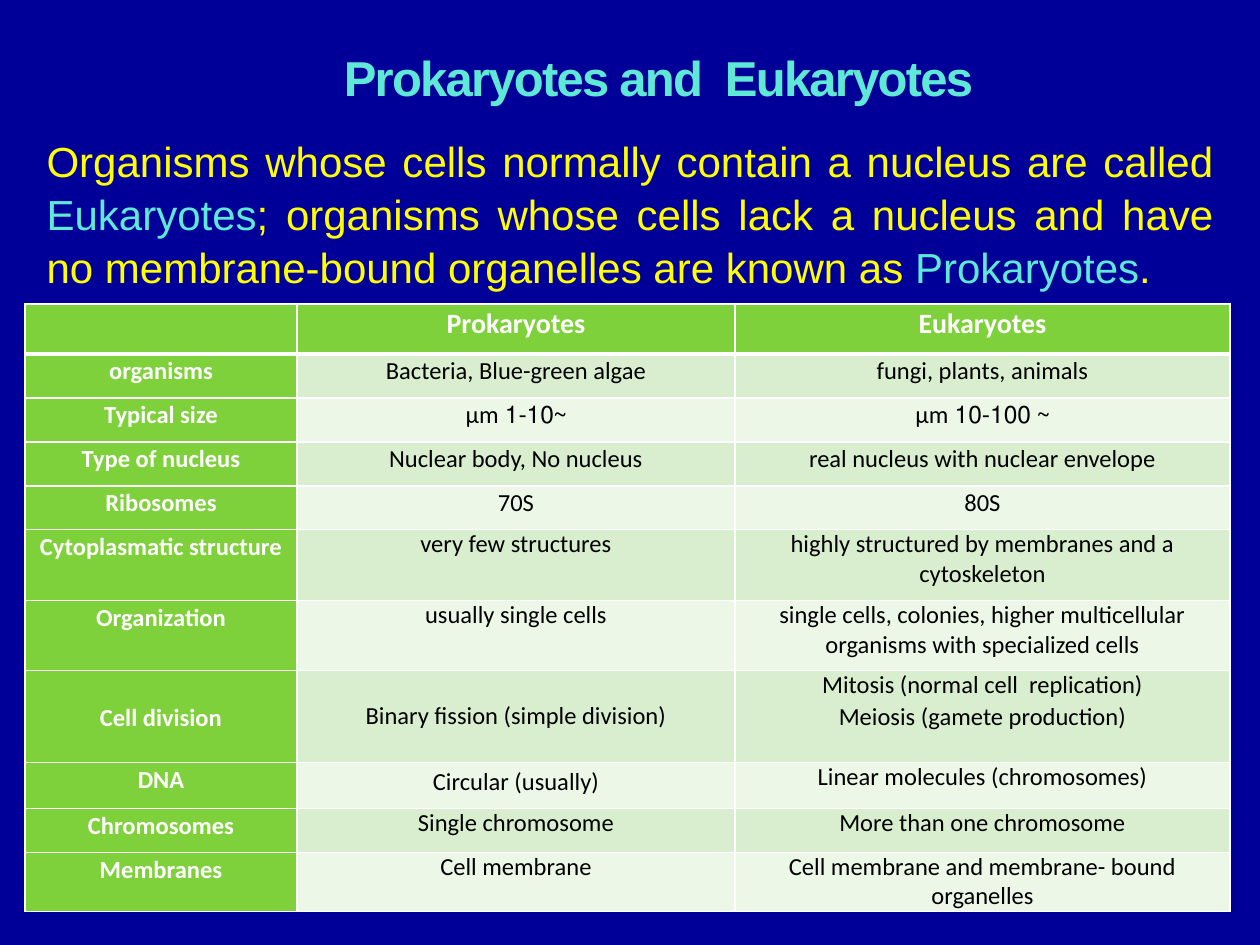
from lxml.etree import SubElement
from pptx import Presentation
from pptx.dml.color import RGBColor
from pptx.enum.text import MSO_ANCHOR, MSO_AUTO_SIZE, PP_ALIGN
from pptx.oxml.ns import qn
from pptx.util import Emu, Pt

NAVY = RGBColor(0x00, 0x00, 0x99)
AQUA = RGBColor(0x5F, 0xE8, 0xD6)
YELLOW = RGBColor(0xFF, 0xFF, 0x00)
GREEN = RGBColor(0x7F, 0xD1, 0x3B)
MINT = RGBColor(0xD8, 0xEE, 0xCE)
PALE = RGBColor(0xEC, 0xF7, 0xE8)
WHITE = RGBColor(0xFF, 0xFF, 0xFF)
BLACK = RGBColor(0x00, 0x00, 0x00)

COLUMNS = [272, 438, 495]
HEIGHTS = [50, 44, 44, 44, 44, 71, 70, 92, 46, 44, 59]
FIRST_EXACT_ROW = 5
DIVISION_ROW = 7
FEATURES = [
    ("", "Prokaryotes", "Eukaryotes"),
    ("organisms", "Bacteria, Blue-green algae", "fungi, plants, animals"),
    ("Typical size", "~1-10 µm", "~ 10-100 µm"),
    ("Type of nucleus", "Nuclear body, No nucleus", "real nucleus with nuclear envelope"),
    ("Ribosomes", "70S", "80S"),
    ("Cytoplasmatic structure", "very few structures",
     "highly structured by membranes and a cytoskeleton"),
    ("Organization", "usually single cells",
     "single cells, colonies, higher multicellular organisms with specialized cells"),
    ("Cell division", "Binary fission (simple division)",
     "Mitosis (normal cell  replication)\nMeiosis (gamete production)"),
    ("DNA", "Circular (usually)", "Linear molecules (chromosomes)"),
    ("Chromosomes", "Single chromosome", "More than one chromosome"),
    ("Membranes", "Cell membrane", "Cell membrane and membrane- bound organelles"),
]
DEFINITION = [
    ("Organisms whose cells normally contain a nucleus are called ", YELLOW),
    ("Eukaryotes", AQUA),
    ("; organisms whose cells lack a nucleus and have no membrane-bound "
     "organelles are known as ", YELLOW),
    ("Prokaryotes", AQUA),
    (".", YELLOW),
]


def px(length):
    """Turn pixels into EMU."""
    return Emu(round(length * 914400 / 126))


class SlideBuilder:
    """Holds the style and the current slide."""

    heading_font = "Arial"
    table_font = "Calibri"

    def __init__(self, deck):
        """Add a slide with a navy background."""
        self.slide = deck.slides.add_slide(deck.slide_layouts[1])
        fill = self.slide.background.fill
        fill.solid()
        fill.fore_color.rgb = NAVY

    def style(self, span, font, size, color, bold=False):
        """Format one run."""
        span.font.name = font
        span.font.size = Pt(size)
        span.font.color.rgb = color
        span.font.bold = bold

    def place(self, box, left, top, width, height, margin_top):
        """Move a placeholder and anchor its text at the top."""
        box.left, box.top, box.width, box.height = map(px, (left, top, width, height))
        frame = box.text_frame
        frame.word_wrap = True
        frame.auto_size = MSO_AUTO_SIZE.NONE
        frame.vertical_anchor = MSO_ANCHOR.TOP
        frame.margin_top = px(margin_top)
        return frame

    def title(self, text):
        """Fill the title placeholder."""
        frame = self.place(self.slide.shapes.title, 123, 37, 1071, 94, 10)
        frame.text = text
        para = frame.paragraphs[0]
        para.alignment = PP_ALIGN.CENTER
        span = para.runs[0]
        self.style(span, self.heading_font, 28, AQUA, True)
        span.font._element.set("spc", "-100")

    def body(self, parts):
        """Fill the body placeholder with coloured runs."""
        frame = self.place(self.slide.placeholders[1], 25, 125, 1201, 804, 8)
        para = frame.paragraphs[0]
        para.alignment = PP_ALIGN.JUSTIFY
        para.line_spacing = 1.05
        para.space_before = Pt(0)
        properties = para._p.get_or_add_pPr()
        properties.set("marL", str(px(9)))
        properties.set("indent", "0")
        SubElement(properties, qn("a:buNone"))
        for text, color in parts:
            span = para.add_run()
            span.text = text
            self.style(span, self.heading_font, 24, color)

    def borders(self, cell, is_header):
        """Draw white lines on all sides of a cell."""
        properties = cell._tc.get_or_add_tcPr()
        for side in "LRTB":
            weight = 3 if is_header and side == "B" else 1
            line = SubElement(properties, qn(f"a:ln{side}"), w=str(Pt(weight)))
            solid = SubElement(line, qn("a:solidFill"))
            SubElement(solid, qn("a:srgbClr"), val=str(WHITE))

    def cell(self, cell, text, row, column):
        """Fill and format one table cell."""
        is_header = row == 0
        is_label = is_header or column == 0
        self.borders(cell, is_header)
        cell.fill.solid()
        cell.fill.fore_color.rgb = GREEN if is_label else MINT if row % 2 else PALE
        cell.margin_left = cell.margin_right = px(9)
        cell.margin_top = cell.margin_bottom = 0
        centred = row == DIVISION_ROW and column < 2
        cell.vertical_anchor = MSO_ANCHOR.MIDDLE if centred else MSO_ANCHOR.TOP
        cell.text_frame.text = text
        for para in cell.text_frame.paragraphs:
            para.alignment = PP_ALIGN.CENTER
            para._p.get_or_add_pPr().set("rtl", "1")
            if text == "Circular (usually)":
                para.line_spacing = 1.15
            elif row >= FIRST_EXACT_ROW and not is_label:
                para.line_spacing = Pt(16.8)
                para.space_after = Pt(1.2)
            else:
                para.line_spacing = 1.07
            for span in para.runs:
                self.style(span, self.table_font, 16 if is_header else 14,
                           WHITE if is_label else BLACK, is_label)

    def table(self, left, top, columns, heights, rows):
        """Add the comparison table."""
        table = self.slide.shapes.add_table(
            len(rows), len(columns), px(left), px(top),
            px(sum(columns)), px(sum(heights))).table
        table.horz_banding = False
        for column, width in zip(table.columns, columns):
            column.width = px(width)
        for row, height in zip(table.rows, heights):
            row.height = px(height)
        for row, texts in enumerate(rows):
            for column, text in enumerate(texts):
                self.cell(table.cell(row, column), text, row, column)


def main():
    """Build and save the deck."""
    deck = Presentation()
    deck.slide_width, deck.slide_height = px(1260), px(945)
    page = SlideBuilder(deck)
    page.title("Prokaryotes and  Eukaryotes")
    page.body(DEFINITION)
    page.table(25, 304, COLUMNS, HEIGHTS, FEATURES)
    deck.save("out.pptx")


if __name__ == "__main__":
    main()
